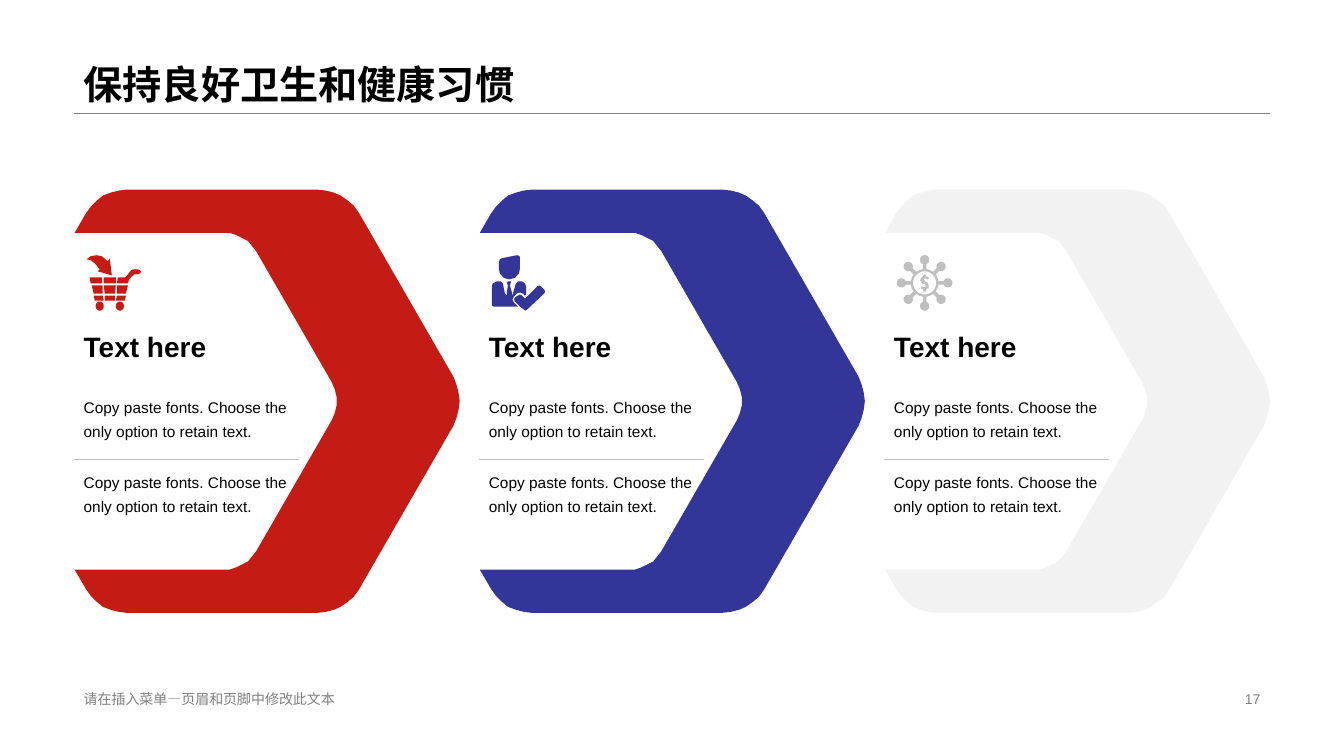
from math import asin, cos, pi, sin

from lxml import etree
from pptx import Presentation
from pptx.dml.color import RGBColor
from pptx.enum.shapes import MSO_CONNECTOR
from pptx.enum.text import MSO_ANCHOR, PP_ALIGN
from pptx.oxml.ns import qn
from pptx.util import Pt

STRAIGHT = MSO_CONNECTOR.STRAIGHT
TOP, MIDDLE, BOTTOM = MSO_ANCHOR.TOP, MSO_ANCHOR.MIDDLE, MSO_ANCHOR.BOTTOM
LEFT, RIGHT = PP_ALIGN.LEFT, PP_ALIGN.RIGHT
color = RGBColor.from_string

UNIT = 0.72  # points per step of the drawing grid
MARGIN = 52.7
CONTENT_WIDTH = 854.6
PANEL_PITCH = 289.4
PANEL_TEXT_WIDTH = 160.6
BODY = "Copy paste fonts. Choose the only option to retain text."

presentation = Presentation()
presentation.slide_width = Pt(960)
presentation.slide_height = Pt(540)
slide = presentation.slides.add_slide(presentation.slide_layouts[6])


def add_text(text, left, top, width, height, size, fill="000000",
             bold=False, anchor=MIDDLE, align=LEFT, spacing=1.0):
    box = slide.shapes.add_textbox(Pt(left), Pt(top), Pt(width), Pt(height))
    frame = box.text_frame
    frame.word_wrap = True
    frame.vertical_anchor = anchor
    paragraph = frame.paragraphs[0]
    paragraph.text = text
    paragraph.alignment = align
    paragraph.line_spacing = spacing
    paragraph.font.name = "Arial"
    paragraph.font.size = Pt(size)
    paragraph.font.bold = bold
    paragraph.font.color.rgb = color(fill)


def add_outline(contours, left, top, fill):
    """Draw closed contours, given in grid steps, as one filled shape."""
    placed = [[(Pt(left + x * UNIT), Pt(top + y * UNIT)) for x, y in contour]
              for contour in contours]
    builder = slide.shapes.build_freeform(*placed[0][0])
    for contour in placed:
        if contour is not placed[0]:
            builder.move_to(*contour[0])
        builder.add_line_segments(contour[1:], close=True)
    shape = builder.convert_to_shape()
    shape.shadow.inherit = False
    shape.fill.solid()
    shape.fill.fore_color.rgb = color(fill)
    shape.line.fill.background()


# Chevron: the upper edges are mirrored about the horizontal axis
outer_edge = [(0, -167), (11, -186), (16, -193), (22, -199), (28, -204),
              (36, -207), (44, -209), (52, -210), (240, -210), (249, -209),
              (257, -207), (264, -204), (271, -199), (277, -194), (282, -187),
              (376, -24), (379, -16), (381, -8), (382, 0)]
inner_edge = [(147, -167), (154, -167), (160, -165), (166, -162), (172, -159),
              (176, -154), (180, -149), (255, -19), (258, -12), (260, -4)]
chevron = (outer_edge + [(x, -y) for x, y in outer_edge[-2::-1]]
           + [(x, -y) for x, y in inner_edge] + inner_edge[::-1])

# Shopping cart icon
unit_circle = [(cos(step * pi / 16), sin(step * pi / 16)) for step in range(32)]
cart = [[(hub + 4 * x, 50.5 + 4.5 * y) for x, y in unit_circle] for hub in (13, 33)]
cart += [
    [(30, 40), (39, 40), (38, 45), (29, 45)],
    [(18, 40), (28, 40), (28, 45), (18, 45)],
    [(7, 40), (16, 40), (17, 45), (8, 45)],
    [(30, 30), (41, 30), (39, 38), (30, 38)],
    [(17, 30), (29, 30), (28, 38), (18, 38)],
    [(5, 30), (16, 30), (16, 38), (7, 38)],
    [(17, 22), (29, 22), (29, 28), (17, 28)],
    [(3, 22), (15, 22), (15, 28), (4, 28)],
    [(46, 14), (51, 14), (53, 15), (54, 16.5), (53, 18), (51, 19), (47, 19),
     (42, 24), (41, 28), (30, 28), (31, 22), (38, 22), (39, 21.5), (44, 15)],
    [(0, 4), (4, 1), (10, 0), (15, 1), (21, 6), (23, 3), (25, 20), (11, 16),
     (13, 14), (8, 8), (4, 5)],
]

# Approved person icon: check mark, body, head
person = [
    [(47, 30), (49, 31), (52, 34), (53, 36), (52, 38), (35, 54), (33, 55),
     (32, 54), (28, 51), (23, 46), (22, 44), (23, 42), (26, 40), (28, 39),
     (30, 40), (33, 43), (45, 31)],
    [(5, 26), (9, 26), (11, 28), (13, 38), (15, 40), (15, 37), (16, 30),
     (15, 27), (16, 26), (19, 26), (19, 27), (18, 30), (20, 37), (20, 40),
     (21, 38), (24, 28), (26, 26), (30, 26), (33, 28), (34, 31), (34, 39),
     (33, 40), (31, 38), (28, 37), (25, 38), (22, 41), (20.5, 44), (22, 47),
     (26, 51), (2, 51), (0.5, 50), (0, 49), (0, 31), (1, 28)],
    [(25, 0), (27, 0.5), (28, 2), (28, 13), (27, 18), (23, 22.5), (17, 24),
     (12, 22.5), (8, 18), (7, 13), (7, 7), (8, 4), (10, 3)],
]

# Money network icon: eight nodes around a ring with a dollar sign
CENTER, RING, HOLE, NODE, REACH, SPOKE = 27.5, 13.8, 11.5, 4.6, 23, 1.8
hub_gap, node_gap = asin(SPOKE / RING), asin(SPOKE / NODE)
network_edge = []
for spoke in range(8):
    angle = spoke * pi / 4
    ring_angles = [angle + hub_gap, angle + pi / 8]
    node_x, node_y = CENTER + REACH * cos(angle), CENTER + REACH * sin(angle)
    for step in range(17):
        turn = angle + pi + node_gap + step * (2 * pi - 2 * node_gap) / 16
        network_edge.append((node_x + NODE * cos(turn), node_y + NODE * sin(turn)))
    for turn in ring_angles + [angle + pi / 4 - hub_gap]:
        network_edge.append((CENTER + RING * cos(turn), CENTER + RING * sin(turn)))
network = [
    network_edge,
    [(CENTER + HOLE * x, CENTER + HOLE * y) for x, y in unit_circle],
    [(27, 19), (28, 19), (29, 20), (29, 21), (31, 21.5), (31.5, 22.5), (31, 24),
     (30, 24), (28, 23), (27, 23.5), (26.5, 24.5), (28, 26), (30, 27), (31.5, 29),
     (31.5, 32), (29, 34), (29, 36), (28, 36.5), (26.5, 36), (26, 34), (23.5, 33),
     (24, 31), (27, 32), (28.5, 31), (28, 29), (25, 28), (23, 25), (24, 22.5),
     (26, 21), (26.5, 20)],
]

# Title and footer
add_text("保持良好卫生和健康习惯", MARGIN, 0, CONTENT_WIDTH, 81, 28,
         bold=True, anchor=BOTTOM, spacing=0.9)
add_text("请在插入菜单—页眉和页脚中修改此文本", MARGIN, 491, 326, 16.3, 10, "808080")
add_text("17", 678.3, 491, 229, 16.3, 10, "808080", align=RIGHT)
rules = [(MARGIN, 81, CONTENT_WIDTH, "808080")]

# Three panels
panels = [("C41C15", cart, "C41C15"),
          ("333599", person, "333599"),
          ("F2F2F2", network, "BFBFBF")]
for index, (chevron_fill, icon, icon_fill) in enumerate(panels):
    left = MARGIN + index * PANEL_PITCH
    add_outline([chevron], left + 0.6, 286.6, chevron_fill)
    add_outline(icon, left + 9.2, 182.3, icon_fill)
    add_text("Text here", left, 226.1, PANEL_TEXT_WIDTH, 43.2, 20, bold=True)
    for top in (277, 330.5):
        add_text(BODY, left, top, PANEL_TEXT_WIDTH, 49, 11, anchor=TOP, spacing=1.3)
    rules.append((left, 328.3, PANEL_TEXT_WIDTH, "BFBFBF"))

# Thin rules
for left, top, width, line_color in rules:
    rule = slide.shapes.add_connector(STRAIGHT, Pt(left), Pt(top),
                                      Pt(left + width), Pt(top))
    rule.line.width = Pt(0.25)
    rule.line.color.rgb = color(line_color)
    etree.SubElement(rule._element.spPr, qn("a:effectLst"))

presentation.save("out.pptx")
